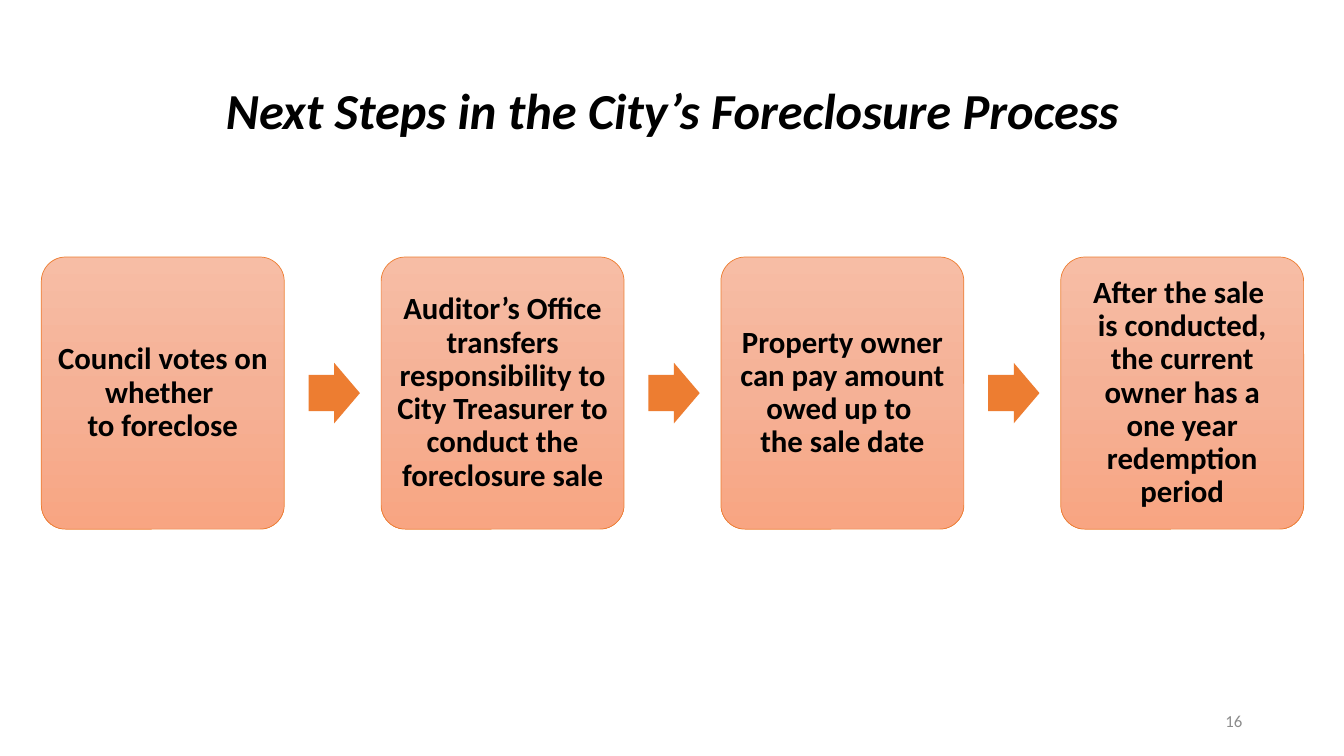
from copy import deepcopy

from pptx import Presentation
from pptx.dml.color import RGBColor
from pptx.enum.shapes import MSO_SHAPE
from pptx.enum.text import MSO_ANCHOR, MSO_AUTO_SIZE, PP_ALIGN
from pptx.oxml.ns import qn
from pptx.util import Pt

ROUND_BOX = MSO_SHAPE.ROUNDED_RECTANGLE
RIGHT_ARROW = MSO_SHAPE.RIGHT_ARROW
MIDDLE = MSO_ANCHOR.MIDDLE
NO_AUTOFIT = MSO_AUTO_SIZE.NONE
CENTER = PP_ALIGN.CENTER
RIGHT = PP_ALIGN.RIGHT

BLACK = RGBColor(0x00, 0x00, 0x00)
GREY = RGBColor(0x8C, 0x8C, 0x8C)
ORANGE = RGBColor(0xED, 0x7D, 0x31)
BOX_STOPS = [
    (0, RGBColor(0xF7, 0xBD, 0xA5)),
    (0.5, RGBColor(0xF5, 0xB1, 0x96)),
    (1, RGBColor(0xF8, 0xA5, 0x82)),
]

STEPS = [
    "Council votes on whether \nto foreclose",
    "Auditor’s Office transfers responsibility to City Treasurer to conduct the foreclosure sale",
    "Property owner can pay amount owed up to \nthe sale date",
    "After the sale \nis conducted, the current owner has a one year redemption period",
]
STEP_LEFT, STEP_PITCH, ARROW_OFFSET = 41, 337, 265


class ProcessPage:
    """Hold the style and the current slide, and draw each kind of element on it."""

    font = "Calibri"
    scale = 9144

    def __init__(self, deck):
        deck.slide_width, deck.slide_height = self.px(1333, 750)
        self.page = deck.slides.add_slide(deck.slide_layouts[5])

    def px(self, *lengths):
        return [length * self.scale for length in lengths]

    def add_text(self, frame, text, size, color, align, spacing=0.9, bold=False, italic=False):
        frame.word_wrap = True
        frame.auto_size = NO_AUTOFIT
        frame.vertical_anchor = MIDDLE
        para = frame.paragraphs[0]
        para.alignment = align
        para.line_spacing = spacing
        for index, line in enumerate(text.split("\n")):
            if index:
                para.add_line_break()
            span = para.add_run()
            span.text = line
            span.font.name = self.font
            span.font.size = Pt(size)
            span.font.bold = bold
            span.font.italic = italic
            span.font.color.rgb = color

    def title(self, text, left, top, width, height):
        box = self.page.shapes.title
        box.left, box.top, box.width, box.height = self.px(left, top, width, height)
        self.add_text(box.text_frame, text, 36, BLACK, CENTER, bold=True, italic=True)

    def shape(self, kind, left, top, width, height, adjustments):
        shape = self.page.shapes.add_shape(kind, *self.px(left, top, width, height))
        shape.shadow.inherit = False
        for index, value in enumerate(adjustments):
            shape.adjustments[index] = value
        return shape

    def step(self, text, left, top, width, height):
        box = self.shape(ROUND_BOX, left, top, width, height, [0.1])
        box.fill.gradient()
        box.fill.gradient_angle = 270
        stop_list = next(box.element.iter(qn("a:gsLst")))
        stop_list.insert(1, deepcopy(stop_list[0]))
        for stop, (position, color) in zip(box.fill.gradient_stops, BOX_STOPS):
            stop.position = position
            stop.color.rgb = color
        box.line.color.rgb = ORANGE
        box.line.width = Pt(0.5)
        frame = box.text_frame
        frame.margin_left = frame.margin_right = self.px(9)[0]
        frame.margin_top = frame.margin_bottom = self.px(9)[0]
        self.add_text(frame, text, 22, BLACK, CENTER, bold=True)

    def arrow(self, left, top, width, height):
        arrow = self.shape(RIGHT_ARROW, left, top, width, height, [0.6, 0.5])
        arrow.fill.solid()
        arrow.fill.fore_color.rgb = ORANGE
        arrow.line.fill.background()

    def page_number(self, text, left, top, width, height):
        box = self.page.shapes.add_textbox(*self.px(left, top, width, height))
        self.add_text(box.text_frame, text, 12, GREY, RIGHT, spacing=1.0)


def main():
    deck = Presentation()
    process = ProcessPage(deck)
    process.title("Next Steps in the City’s Foreclosure Process", 92, 40, 1150, 145)
    for index, text in enumerate(STEPS):
        left = STEP_LEFT + index * STEP_PITCH
        process.step(text, left, 255, 241, 270)
        if index < len(STEPS) - 1:
            process.arrow(left + ARROW_OFFSET, 360, 51, 60)
    process.page_number("16", 942, 695, 300, 40)
    deck.save("out.pptx")


if __name__ == "__main__":
    main()
